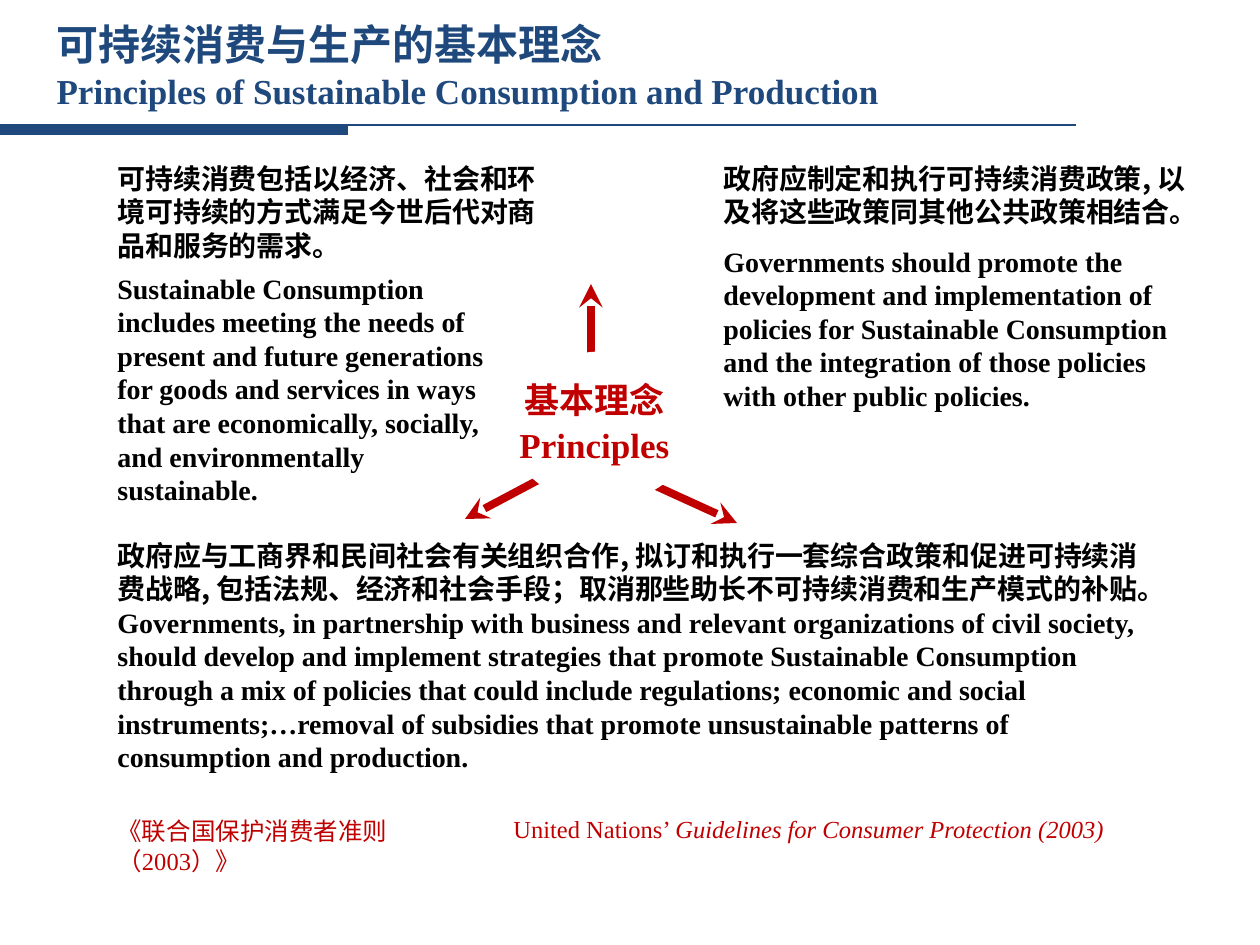
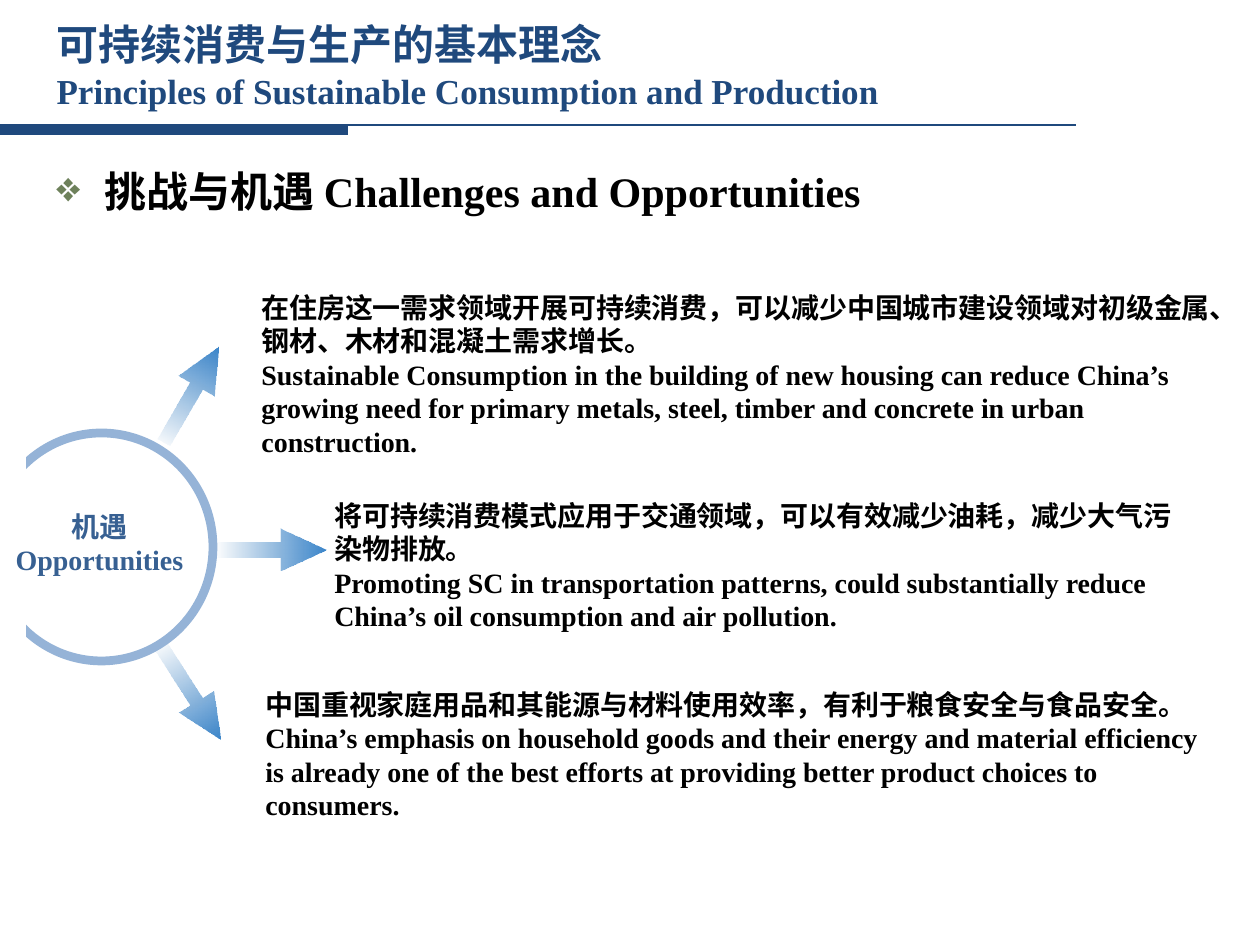
from lxml.etree import SubElement
from pptx import Presentation
from pptx.dml.color import RGBColor
from pptx.enum.shapes import MSO_CONNECTOR as Connector, MSO_SHAPE as Shape
from pptx.enum.text import MSO_ANCHOR as Anchor, MSO_AUTO_SIZE as AutoSize, PP_ALIGN as Align
from pptx.oxml import parse_xml
from pptx.oxml.ns import nsdecls, qn
from pptx.util import Emu, Pt

CHINESE = "Noto Sans CJK SC"
LATIN = "Times New Roman"
NAVY, RED, BLACK, WHITE = "1F497D", "C00000", "000000", "FFFFFF"
rgb = RGBColor.from_string


def px(length):
    return Emu(round(length * 914400 / 126))


def write(frame, lines, size=16, color=BLACK, align=Align.LEFT, bold=True, gap=0):
    frame.word_wrap = True
    for index, (font, text) in enumerate(lines):
        para = frame.add_paragraph() if index else frame.paragraphs[0]
        para.add_run().text = text
        para.alignment = align
        if index and gap:
            para.space_before = Pt(gap)
        para.font.name = font
        para.font.size = Pt(size)
        para.font.bold = bold
        para.font.color.rgb = rgb(color)
        SubElement(para._p.pPr.find(qn("a:defRPr")), qn("a:ea"), typeface=CHINESE)


deck = Presentation()
deck.slide_width, deck.slide_height = px(1260), px(945)
pages = [deck.slides.add_slide(deck.slide_layouts[5]) for _ in range(2)]

for page in pages:
    rule = page.shapes.add_connector(Connector.STRAIGHT, 0, px(125), px(1076), px(125))
    rule.line.color.rgb = rgb(NAVY)
    rule.line.width = Pt(1.5)
    SubElement(rule._element.spPr, qn("a:effectLst"))
    band = page.shapes.add_shape(Shape.RECTANGLE, 0, px(125), px(348), px(10))
    band.shadow.inherit = False
    band.fill.solid()
    band.fill.fore_color.rgb = rgb(NAVY)
    band.line.fill.background()
    title = page.shapes.title
    title.left, title.top, title.width, title.height = map(px, (44, 26, 1081, 78))
    frame = title.text_frame
    frame.auto_size = AutoSize.NONE
    frame.vertical_anchor = Anchor.MIDDLE
    write(frame, [(CHINESE, "可持续消费与生产的基本理念"),
                  (LATIN, "Principles of Sustainable Consumption and Production")], 24, NAVY)
    frame.paragraphs[1].font.size = Pt(20)

principles, opportunities = pages

statements = [
    ((105, 155, 446, 115), 0, [
        (CHINESE, "可持续消费包括以经济、社会和环境可持续的方式满足今世后代对商品和服务的需求。")]),
    ((711, 155, 495, 301), 9, [
        (CHINESE, "政府应制定和执行可持续消费政策, 以及将这些政策同其他公共政策相结合。"),
        (LATIN, "Governments should promote the development and implementation of policies for "
                "Sustainable Consumption and the integration of those policies with other public policies.")]),
    ((105, 265, 407, 251), 0, [
        (LATIN, "Sustainable Consumption includes meeting the needs of present and future generations "
                "for goods and services in ways that are economically, socially, and environmentally "
                "sustainable.")]),
    ((105, 532, 1062, 285), 0, [
        (CHINESE, "政府应与工商界和民间社会有关组织合作, 拟订和执行一套综合政策和促进可持续消费战略, "
                  "包括法规、经济和社会手段；取消那些助长不可持续消费和生产模式的补贴。"),
        (LATIN, "Governments, in partnership with business and relevant organizations of civil society, "
                "should develop and implement strategies that promote Sustainable Consumption through a "
                "mix of policies that could include regulations; economic and social instruments;…removal "
                "of subsidies that promote unsustainable patterns of consumption and production.")]),
]
for place, gap, lines in statements:
    box = principles.shapes.add_textbox(*map(px, place))
    write(box.text_frame, lines, gap=gap)

for ends in [(591, 440, 591, 284), (610, 442, 465, 519), (581, 452, 737, 523)]:
    arrow = principles.shapes.add_connector(Connector.STRAIGHT, *map(px, ends))
    arrow.line.color.rgb = rgb(RED)
    arrow.line.width = Pt(4.5)
    SubElement(arrow.line._get_or_add_ln(), qn("a:tailEnd"), type="stealth")
    SubElement(arrow._element.spPr, qn("a:effectLst"))

hub = principles.shapes.add_shape(Shape.OVAL, *map(px, (512, 355, 179, 145)))
hub.shadow.inherit = False
hub.fill.solid()
hub.fill.fore_color.rgb = rgb(WHITE)
hub.line.color.rgb = rgb(WHITE)
hub.line.width = Pt(4)
hub_label = principles.shapes.add_textbox(*map(px, (451, 372, 287, 101)))
write(hub_label.text_frame, [(LATIN, "基本理念"), (LATIN, "Principles")], 20, RED, Align.CENTER, gap=2)

chinese_source = principles.shapes.add_textbox(*map(px, (105, 810, 421, 72)))
chinese_source.text_frame.margin_right = px(114)
write(chinese_source.text_frame, [(LATIN, "《联合国保护消费者准则（2003）》")], 14, RED, bold=False)
english_source = principles.shapes.add_textbox(*map(px, (501, 808, 804, 43)))
write(english_source.text_frame, [(LATIN, "United Nations’ ")], 14, RED, bold=False)
span = english_source.text_frame.paragraphs[0].add_run()
span.text = "Guidelines for Consumer Protection (2003)"
span.font.italic = True

heading = opportunities.shapes.add_textbox(*map(px, (44, 165, 1181, 139)))
write(heading.text_frame, [(CHINESE, "挑战与机遇 ")], 24)
para = heading.text_frame.paragraphs[0]
para.line_spacing = 0.9
span = para.add_run()
span.text = "Challenges and Opportunities"
span.font.name = LATIN
properties = para._p.pPr
properties.set("marL", str(px(48)))
properties.set("indent", str(-px(48)))
for bullet in ['<a:buClr {}><a:srgbClr val="6E815B"/></a:buClr>', '<a:buChar {} char="❖"/>']:
    properties.find(qn("a:defRPr")).addprevious(parse_xml(bullet.format(nsdecls("a"))))

benefits = [
    ((249, 284, 975, 183),
     "在住房这一需求领域开展可持续消费，可以减少中国城市建设领域对初级金属、钢材、木材和混凝土需求增长。",
     "Sustainable Consumption in the building of new housing can reduce China’s growing need for "
     "primary metals, steel, timber and concrete in urban construction."),
    ((322, 492, 883, 183),
     "将可持续消费模式应用于交通领域，可以有效减少油耗，减少大气污染物排放。",
     "Promoting SC in transportation patterns, could substantially reduce China’s oil consumption "
     "and air pollution."),
    ((253, 681, 965, 149),
     "中国重视家庭用品和其能源与材料使用效率，有利于粮食安全与食品安全。",
     "China’s emphasis on household goods and their energy and material efficiency is already one "
     "of the best efforts at providing better product choices to consumers."),
]
for place, chinese, english in benefits:
    box = opportunities.shapes.add_textbox(*map(px, place))
    write(box.text_frame, [(CHINESE, chinese), (LATIN, english)])

for left, top, turn in [(136, 374, 299.6), (136, 673, 57.8), (216, 529, 0)]:
    arrow = opportunities.shapes.add_shape(Shape.RIGHT_ARROW, *map(px, (left, top, 110, 41)))
    arrow.shadow.inherit = False
    arrow.rotation = turn
    arrow.adjustments[0], arrow.adjustments[1] = 0.35, 1.11
    arrow.line.fill.background()
    arrow.fill.gradient()
    arrow.fill.gradient_angle = 0
    for stop, color in zip(arrow.fill.gradient_stops, ("367DBF", "3984C9")):
        stop.color.rgb = rgb(color)
    SubElement(arrow._element.xpath(".//a:gs/a:srgbClr")[0], qn("a:alpha"), val="0")

circle = opportunities.shapes.add_shape(Shape.OVAL, *map(px, (-10, 433, 223, 228)))
circle.shadow.inherit = False
circle.fill.background()
circle.line.color.rgb = rgb("95B3D7")
circle.line.width = Pt(5)
cover = opportunities.shapes.add_shape(Shape.RECTANGLE, *map(px, (0, 334, 25, 436)))
cover.shadow.inherit = False
cover.fill.solid()
cover.fill.fore_color.rgb = rgb(WHITE)
cover.line.color.rgb = rgb(WHITE)
cover.line.width = Pt(0.75)
circle_label = opportunities.shapes.add_textbox(*map(px, (0, 503, 199, 81)))
write(circle_label.text_frame, [(CHINESE, "机遇"), (LATIN, "Opportunities")], 16, "376092", Align.CENTER)

deck.save("out.pptx")
